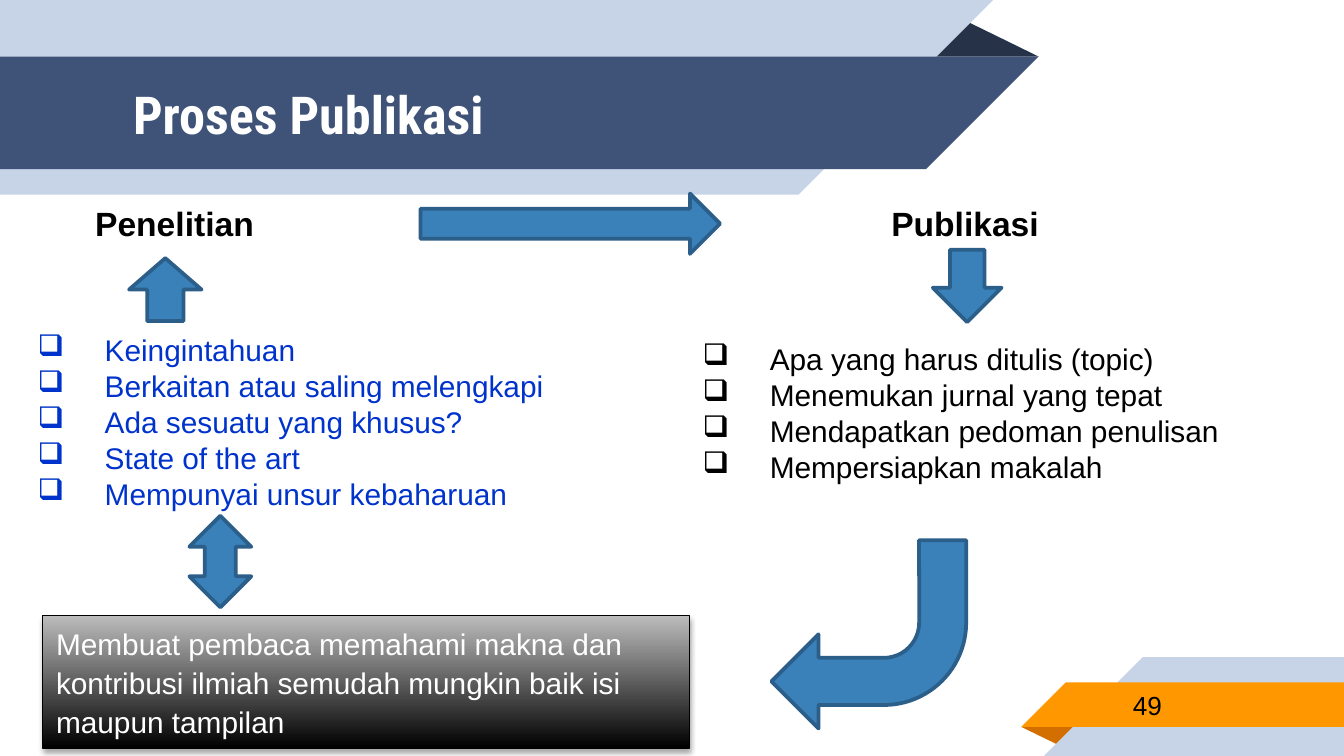
from dataclasses import dataclass

from lxml.etree import SubElement
from pptx import Presentation
from pptx.dml.color import RGBColor as Rgb
from pptx.enum.shapes import MSO_SHAPE as Shape
from pptx.enum.text import MSO_ANCHOR as Anchor, MSO_AUTO_SIZE as AutoSize, PP_ALIGN as Align
from pptx.oxml.ns import qn
from pptx.util import Cm, Pt


@dataclass(frozen=True)
class Theme:
    pale: str = "C7D3E6"
    navy: str = "3F5378"
    navy_fold: str = "263248"
    orange: str = "FF9800"
    orange_fold: str = "D26F00"
    arrow: str = "3A81BA"
    arrow_edge: str = "2B5F8A"
    research: str = "0033CC"
    black: str = "000000"
    gray: str = "BDBDBD"
    white: str = "FFFFFF"
    title_font: str = "Roboto Condensed"
    body_font: str = "Arial"
    title_size: int = 28
    heading_size: int = 18
    body_size: int = 16
    number_size: int = 14


THEME = Theme()


@dataclass(frozen=True)
class Box:
    """A rectangle in centimetres."""
    left: float
    top: float
    width: float
    height: float

    def inside(self, dx, dy, width, height):
        return Box(self.left + dx, self.top + dy, width, height)

    def lengths(self):
        return [Cm(v) for v in (self.left, self.top, self.width, self.height)]


def color(value):
    return Rgb.from_string(value)


def style_font(paragraph, size, ink, bold=False, face=THEME.body_font):
    font = paragraph.font
    font.name, font.size, font.bold = face, Pt(size), bold
    font.color.rgb = color(ink)


def add_polygon(slide, box, points, fill):
    """Draw a filled outline whose points are relative to the box."""
    (x, y), *rest = [(Cm(box.left + dx), Cm(box.top + dy)) for dx, dy in points]
    builder = slide.shapes.build_freeform(x, y)
    builder.add_line_segments(rest)
    band = builder.convert_to_shape()
    band.fill.solid()
    band.fill.fore_color.rgb = color(fill)
    band.line.fill.background()
    band.shadow.inherit = False


def add_arrow(slide, box, kind, rotation=0):
    arrow = slide.shapes.add_shape(kind, *box.lengths())
    arrow.rotation = rotation
    arrow.fill.solid()
    arrow.fill.fore_color.rgb = color(THEME.arrow)
    arrow.line.color.rgb = color(THEME.arrow_edge)
    arrow.line.width = Pt(2)
    arrow.shadow.inherit = False


def add_text(slide, box, lines, size, ink, bold=False, align=Align.LEFT):
    frame = slide.shapes.add_textbox(*box.lengths()).text_frame
    frame.word_wrap = True
    frame.text = "\n".join(lines)
    for paragraph in frame.paragraphs:
        paragraph.alignment = align
        style_font(paragraph, size, ink, bold)
    return frame


def add_heading(slide, box, heading, align=Align.LEFT):
    add_text(slide, box, [heading], THEME.heading_size, THEME.black, True, align)


def add_checklist(slide, box, items, ink):
    frame = add_text(slide, box, items, THEME.body_size, ink)
    for paragraph in frame.paragraphs:
        properties = paragraph._p.get_or_add_pPr()
        properties.set("marL", str(Cm(1.27)))
        properties.set("indent", str(-Cm(1.27)))
        SubElement(properties, qn("a:buChar"), char="❑")


def add_header(slide, box, heading):
    w, h = box.width, box.height
    add_polygon(slide, box, [(17.48, 1.07), (18.18, 0.36), (w, 1.07)], THEME.navy_fold)
    add_polygon(slide, box, [(0, 0), (18.77, 0), (18.77 - h, h), (0, h)], THEME.pale)
    add_polygon(slide, box, [(0, 1.07), (w, 1.07), (w - 2.13, 3.2), (0, 3.2)], THEME.navy)

    title = slide.shapes.title
    title.left, title.top, title.width, title.height = box.inside(2.26, 1.09, 15.27, 2.13).lengths()
    frame = title.text_frame
    frame.text = heading
    frame.auto_size = AutoSize.NONE
    frame.vertical_anchor = Anchor.MIDDLE
    frame.margin_top = frame.margin_bottom = Cm(0.25)
    frame.paragraphs[0].alignment = Align.LEFT
    style_font(frame.paragraphs[0], THEME.title_size, THEME.white, True, THEME.title_font)
    slide.shapes._spTree.append(title._element)  # in front of the bands


def add_footer(slide, box, number):
    w, h = box.width, box.height
    add_polygon(slide, box, [(0, 1.32), (1.09, 1.32), (0.74, 1.68)], THEME.orange_fold)
    add_polygon(slide, box, [(0.43, h), (0.43 + h, 0), (w, 0), (w, h)], THEME.pale)
    add_polygon(slide, box, [(0, 1.32), (0.84, 0.48), (w, 0.48), (w, 1.32)], THEME.orange)
    frame = add_text(slide, box.inside(1.86, 0.46, 4.14, 0.89), [number],
                     THEME.number_size, THEME.black)
    frame.vertical_anchor = Anchor.MIDDLE


def add_goal(slide, box, goal):
    panel = slide.shapes.add_shape(Shape.RECTANGLE, *box.lengths())
    panel.fill.gradient()
    panel.fill.gradient_angle = 90
    for stop, shade in zip(panel.fill.gradient_stops, (THEME.black, THEME.gray)):
        stop.color.rgb = color(shade)
    panel.line.color.rgb = color(THEME.black)
    panel.line.width = Pt(0.75)

    panel.shadow.inherit = False
    effects = panel._element.spPr.find(qn("a:effectLst"))
    shadow = SubElement(effects, qn("a:outerShdw"), blurRad=str(Pt(3.1)), dist=str(Pt(1.8)),
                        dir="5400000", rotWithShape="0")
    tint = SubElement(shadow, qn("a:srgbClr"), val=THEME.black)
    SubElement(tint, qn("a:alpha"), val="35000")

    frame = panel.text_frame
    frame.word_wrap = True
    frame.vertical_anchor = Anchor.TOP
    frame.text = goal
    paragraph = frame.paragraphs[0]
    paragraph.alignment = Align.LEFT
    paragraph.line_spacing = 1.1
    style_font(paragraph, THEME.body_size, THEME.white)


def add_research(slide, box, heading, reasons, goal):
    add_heading(slide, box.inside(1.09, 0, 4.5, 1.02), heading)
    add_arrow(slide, box.inside(1.98, 1.17, 1.37, 1.19), Shape.UP_ARROW)
    add_checklist(slide, box.inside(0, 2.44, box.width, 3.68), reasons, THEME.research)
    add_arrow(slide, box.inside(3.12, 6.04, 1.17, 1.73), Shape.UP_DOWN_ARROW)
    add_goal(slide, box.inside(0.35, 7.92, 12.22, 2.51), goal)


def add_publication(slide, box, heading, steps):
    add_heading(slide, box.inside(2.85, 0, 4.72, 1.02), heading, Align.CENTER)
    add_arrow(slide, box.inside(4.6, 1.01, 1.3, 1.37), Shape.DOWN_ARROW)
    add_checklist(slide, box.inside(0, 2.61, box.width, 3), steps, THEME.black)
    add_arrow(slide, box.inside(1.55, 6.5, 3.68, 3.56), Shape.BENT_ARROW, 180)


def main():
    deck = Presentation()
    deck.slide_width, deck.slide_height = Cm(25.4), Cm(14.29)
    slide = deck.slides.add_slide(deck.slide_layouts[5])

    add_header(slide, Box(0, 0, 19.63, 3.68), "Proses Publikasi")
    add_footer(slide, Box(19.3, 12.42, 6.1, 1.87), "49")
    add_research(
        slide, Box(0.46, 3.71, 11.96, 10.43), "Penelitian",
        ["Keingintahuan", "Berkaitan atau saling melengkapi", "Ada sesuatu yang khusus?",
         "State of the art", "Mempunyai unsur kebaharuan"],
        "Membuat pembaca memahami makna dan kontribusi ilmiah semudah mungkin "
        "baik isi maupun tampilan")
    add_publication(
        slide, Box(13.03, 3.71, 11.13, 10.06), "Publikasi",
        ["Apa yang harus ditulis (topic)", "Menemukan jurnal yang tepat",
         "Mendapatkan pedoman penulisan", "Mempersiapkan makalah"])
    add_arrow(slide, Box(7.95, 3.66, 5.66, 1.14), Shape.RIGHT_ARROW)

    deck.save("out.pptx")


if __name__ == "__main__":
    main()
